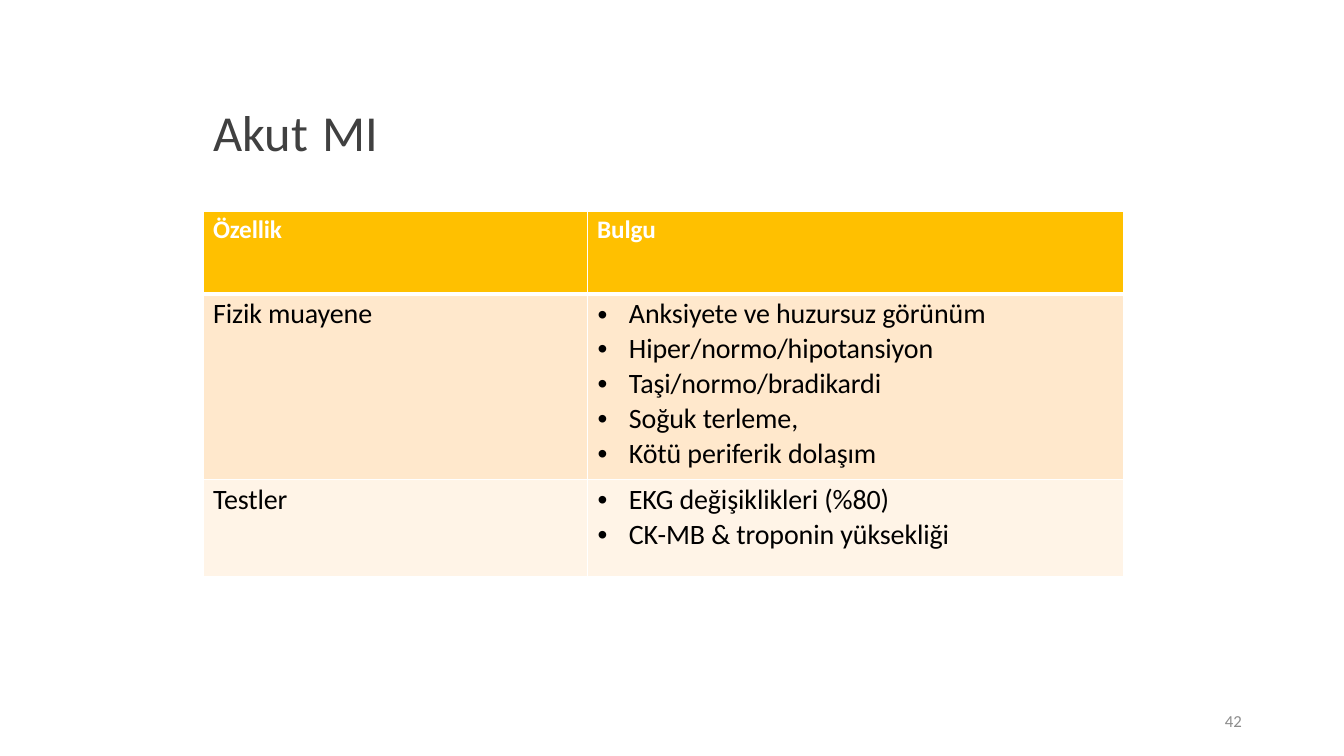
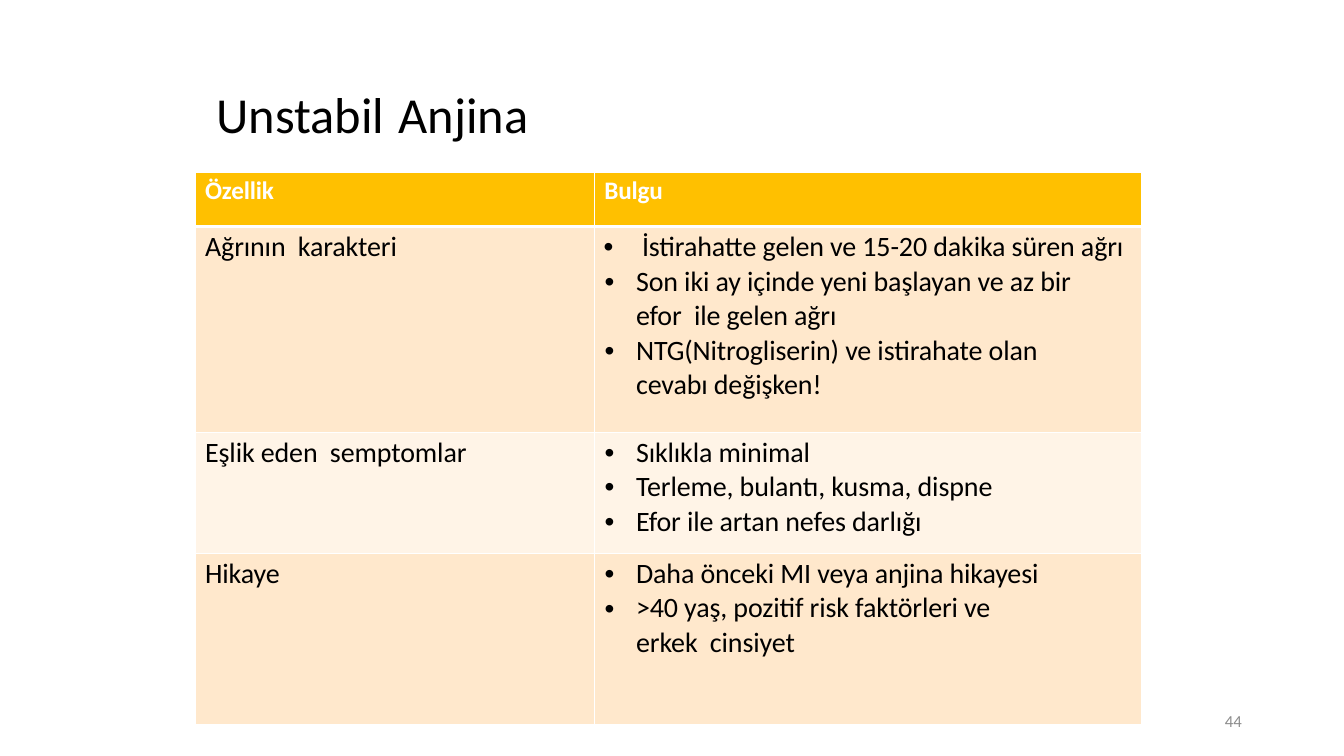
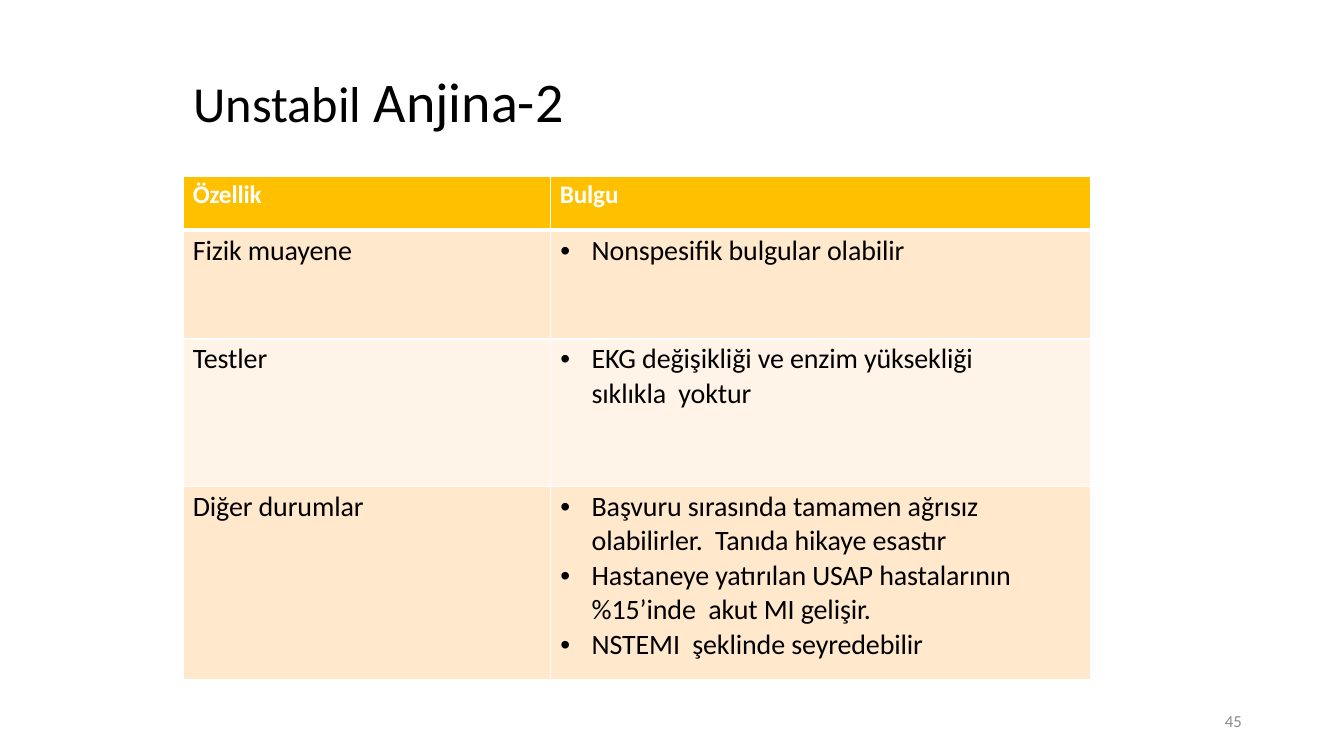
from dataclasses import dataclass

from lxml import etree
from pptx import Presentation
from pptx.dml.color import RGBColor
from pptx.enum import text as t
from pptx.oxml.ns import qn
from pptx.util import Cm, Pt


# Shared look
@dataclass(frozen=True)
class Theme:
    font: str = "Calibri"
    white: str = "FFFFFF"
    black: str = "000000"
    title_gray: str = "404040"
    number_gray: str = "8C8C8C"
    header: str = "FFC000"
    bands: tuple = ("FFE8CC", "FFF4E7")
    title_size: int = 36
    header_size: int = 18
    body_size: int = 20
    number_size: int = 12
    tracking: int = -10  # hundredths of a point
    border: int = 1
    header_border: int = 3
    first_space: float = 2
    next_space: float = 0.4
    label_indent: float = 0.24
    cell_top: float = 0.08


THEME = Theme()
HEADINGS = ("Özellik", "Bulgu")


@dataclass(frozen=True)
class Bullet:
    text: str
    right: float = 0
    left: float = 1.04
    hanging: float = 0.79


# Text
def add_text(paragraph, content, size, color=THEME.black, bold=False, tracking=0):
    run = paragraph.add_run()
    run.text = content
    run.font.name = THEME.font
    run.font.size = Pt(size)
    run.font.bold = bold
    run.font.color.rgb = RGBColor.from_string(color)
    if tracking:
        run._r.get_or_add_rPr().set("spc", str(tracking))


def indent(paragraph, left, first=0, right=0):
    properties = paragraph._p.get_or_add_pPr()
    for name, value in (("marL", left), ("marR", right), ("indent", first)):
        properties.set(name, str(Cm(value)))
    return properties


def add_title(slide, box, runs, color=THEME.black, left_margin=0.25):
    title = slide.shapes.title
    title.left, title.top, title.width, title.height = map(Cm, box)
    frame = title.text_frame
    frame.auto_size = t.MSO_AUTO_SIZE.NONE
    frame.vertical_anchor = t.MSO_ANCHOR.MIDDLE
    frame.margin_left = Cm(left_margin)
    paragraph = frame.paragraphs[0]
    paragraph.alignment = t.PP_ALIGN.LEFT
    paragraph.line_spacing = 0.9
    for content, size in runs:
        add_text(paragraph, content, size, color)


def add_number(slide, number):
    box = slide.shapes.add_textbox(Cm(23.93), Cm(17.65), Cm(7.62), Cm(1.02))
    frame = box.text_frame
    frame.word_wrap = True
    frame.vertical_anchor = t.MSO_ANCHOR.MIDDLE
    paragraph = frame.paragraphs[0]
    paragraph.alignment = t.PP_ALIGN.RIGHT
    add_text(paragraph, str(number), THEME.number_size, THEME.number_gray)


# Table
def style_cell(cell, fill, top, bottom):
    cell.margin_left = cell.margin_right = cell.margin_bottom = 0
    cell.margin_top = Cm(THEME.cell_top)
    properties = cell._tc.get_or_add_tcPr()
    widths = {"L": THEME.border, "R": THEME.border, "T": top, "B": bottom}
    for side, width in widths.items():
        line = etree.SubElement(properties, qn(f"a:ln{side}"), w=str(Pt(width)))
        solid = etree.SubElement(line, qn("a:solidFill"))
        etree.SubElement(solid, qn("a:srgbClr"), val=THEME.white)
    cell.fill.solid()
    cell.fill.fore_color.rgb = RGBColor.from_string(fill)


def fill_label(cell, content, **style):
    paragraph = cell.text_frame.paragraphs[0]
    paragraph.space_before = Pt(THEME.first_space)
    indent(paragraph, THEME.label_indent)
    add_text(paragraph, content, tracking=THEME.tracking, **style)


def fill_bullets(cell, bullets):
    frame = cell.text_frame
    for index, bullet in enumerate(bullets):
        paragraph = frame.add_paragraph() if index else frame.paragraphs[0]
        paragraph.space_before = Pt(THEME.next_space if index else THEME.first_space)
        properties = indent(paragraph, bullet.left, -bullet.hanging, bullet.right)
        etree.SubElement(properties, qn("a:buFont"), typeface="Arial")
        etree.SubElement(properties, qn("a:buChar"), char="•")
        add_text(paragraph, bullet.text, THEME.body_size, tracking=THEME.tracking)


def add_findings(slide, position, columns, heights, findings):
    frame = slide.shapes.add_table(
        len(heights), len(columns), *map(Cm, position), Cm(sum(columns)), Cm(sum(heights)))
    table = frame.table
    for column, width in zip(table.columns, columns):
        column.width = Cm(width)
    for row, height in zip(table.rows, heights):
        row.height = Cm(height)
    for cell, heading in zip(table.rows[0].cells, HEADINGS):
        style_cell(cell, THEME.header, THEME.border, THEME.header_border)
        fill_label(cell, heading, size=THEME.header_size, color=THEME.white, bold=True)
    for index, (label, bullets) in enumerate(findings):
        label_cell, bullet_cell = table.rows[index + 1].cells
        top = THEME.border if index else THEME.header_border
        for cell in (label_cell, bullet_cell):
            style_cell(cell, THEME.bands[index % 2], top, THEME.border)
        fill_label(label_cell, label, size=THEME.body_size)
        fill_bullets(bullet_cell, bullets)


# Content
SLIDES = [
    dict(
        number=42,
        title=dict(box=(5.13, 1.73, 22.86, 3.18), color=THEME.title_gray,
                   runs=[("Akut", THEME.title_size), (" ", 44), ("MI", THEME.title_size)]),
        table=dict(
            position=(5.13, 5.33), columns=(9.68, 13.51), heights=(2.08, 4.67, 2.44),
            findings=[
                ("Fizik muayene", [
                    Bullet("Anksiyete ve huzursuz görünüm"),
                    Bullet("Hiper/normo/hipotansiyon"),
                    Bullet("Taşi/normo/bradikardi"),
                    Bullet("Soğuk terleme,"),
                    Bullet("Kötü periferik dolaşım")]),
                ("Testler", [
                    Bullet("EKG değişiklikleri (%80)"),
                    Bullet("CK-MB & troponin yüksekliği")]),
            ])),
    dict(
        number=44,
        title=dict(box=(2.34, 1.02, 29.21, 3.68), left_margin=3.12,
                   runs=[("Unstabil", THEME.title_size), (" ", 44),
                         ("Anjina", THEME.title_size)]),
        table=dict(
            position=(4.93, 4.34), columns=(10.06, 13.77), heights=(1.37, 5.18, 3.05, 4.32),
            findings=[
                ("Ağrının  karakteri", [
                    Bullet("İstirahatte gelen ve 15-20 dakika süren ağrı",
                           left=1.19, hanging=0.97),
                    Bullet("Son iki ay içinde yeni başlayan ve az bir efor  ile gelen ağrı",
                           right=1.5),
                    Bullet("NTG(Nitrogliserin) ve istirahate olan cevabı değişken!",
                           right=1.5)]),
                ("Eşlik eden  semptomlar", [
                    Bullet("Sıklıkla minimal"),
                    Bullet("Terleme, bulantı, kusma, dispne"),
                    Bullet("Efor ile artan nefes darlığı")]),
                ("Hikaye", [
                    Bullet("Daha önceki MI veya anjina hikayesi"),
                    Bullet(">40 yaş, pozitif risk faktörleri ve erkek  cinsiyet",
                           right=2.9)]),
            ])),
    dict(
        number=45,
        title=dict(box=(4.62, 1.04, 22.61, 3.18),
                   runs=[("Unstabil", THEME.title_size), (" Anjina-2", 40)]),
        table=dict(
            position=(4.62, 4.45), columns=(9.25, 13.61), heights=(1.35, 2.74, 3.71, 4.88),
            findings=[
                ("Fizik muayene", [Bullet("Nonspesifik bulgular olabilir")]),
                ("Testler", [
                    Bullet("EKG değişikliği ve enzim yüksekliği sıklıkla  yoktur", right=2)]),
                ("Diğer durumlar", [
                    Bullet("Başvuru sırasında tamamen ağrısız olabilirler.  "
                           "Tanıda hikaye esastır", right=1.5),
                    Bullet("Hastaneye yatırılan USAP hastalarının %15’inde  "
                           "akut MI gelişir.", right=1),
                    Bullet("NSTEMI  şeklinde seyredebilir")]),
            ])),
]


def main():
    presentation = Presentation()
    presentation.slide_width, presentation.slide_height = Cm(33.87), Cm(19.05)
    title_only = presentation.slide_layouts[5]
    for content in SLIDES:
        slide = presentation.slides.add_slide(title_only)
        add_title(slide, **content["title"])
        add_findings(slide, **content["table"])
        add_number(slide, content["number"])
    presentation.save("out.pptx")


if __name__ == "__main__":
    main()
